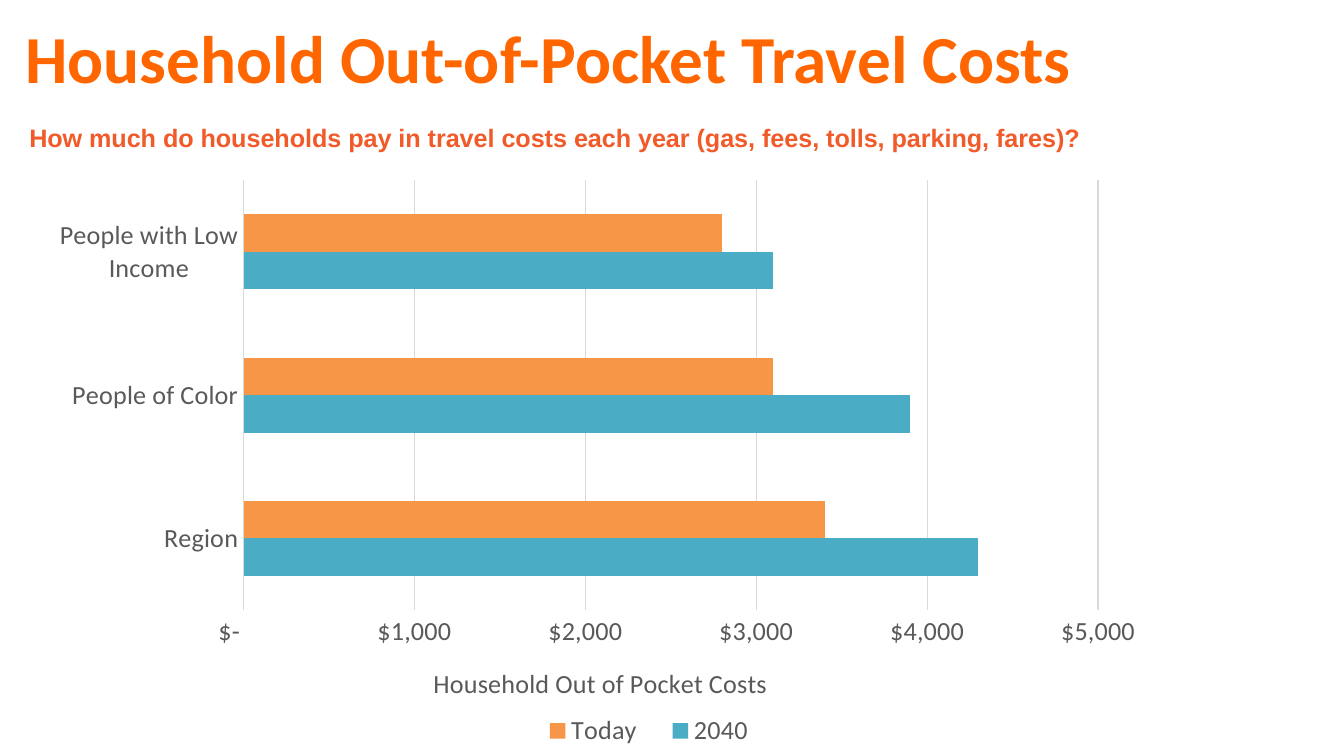
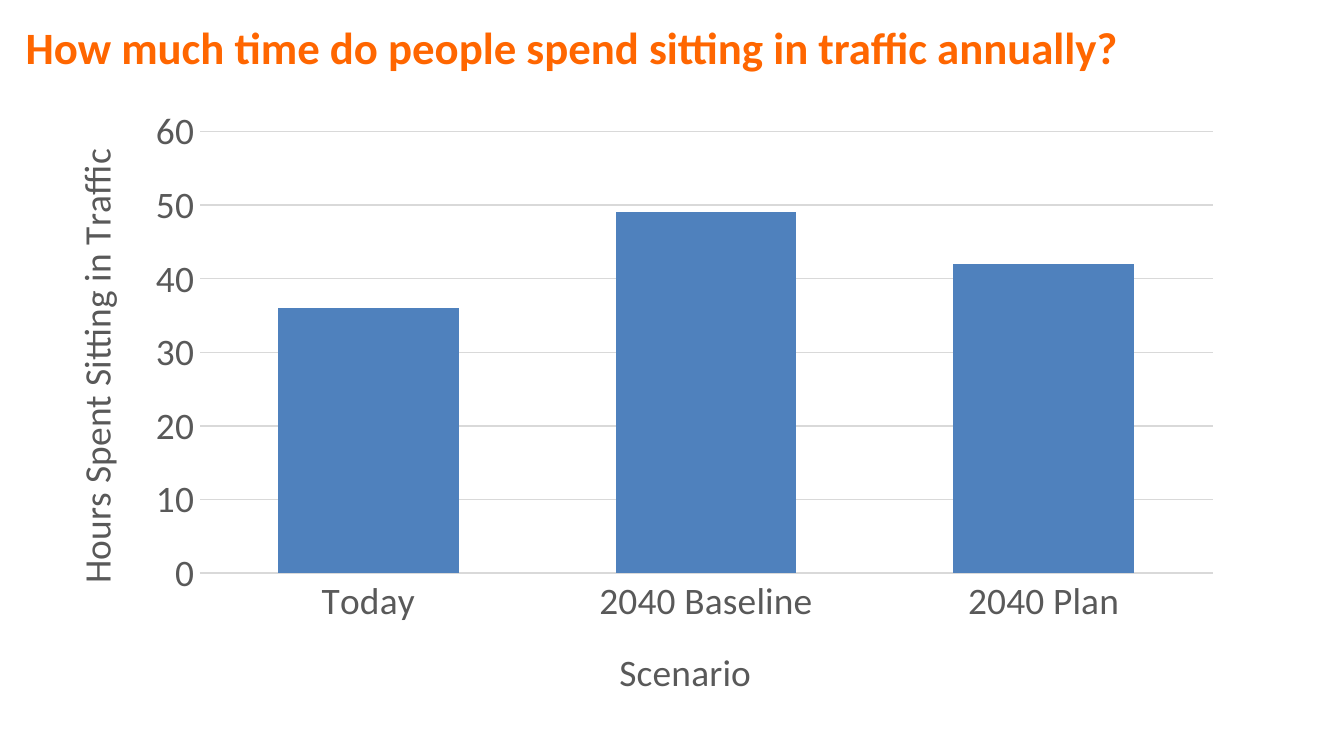
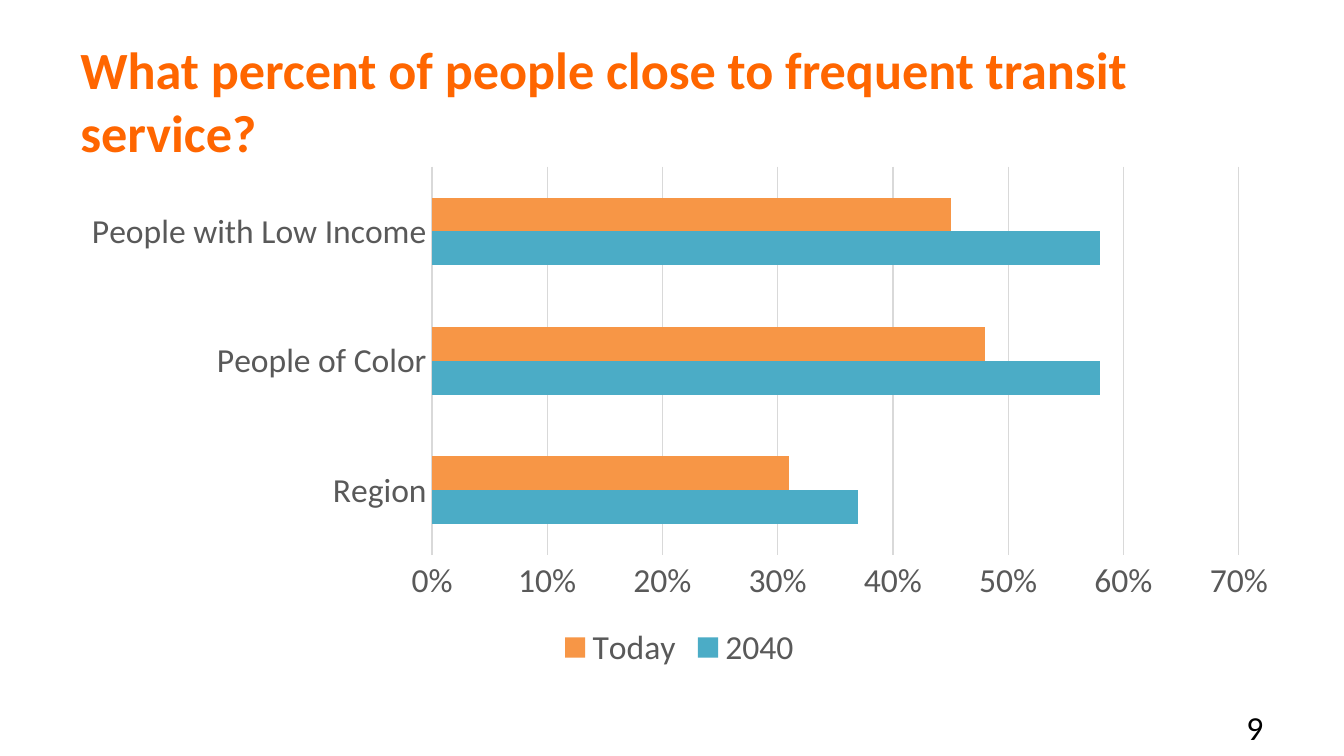
from lxml.etree import SubElement
from pptx import Presentation
from pptx.chart.data import CategoryChartData
from pptx.dml.color import RGBColor
from pptx.enum.chart import XL_CHART_TYPE as ChartType
from pptx.enum.chart import XL_LEGEND_POSITION as LegendPosition
from pptx.enum.chart import XL_TICK_MARK as TickMark
from pptx.enum.text import MSO_AUTO_SIZE as AutoSize
from pptx.enum.text import PP_ALIGN as Align
from pptx.oxml.ns import qn
from pptx.util import Inches, Pt

ORANGE, RUST, BLACK = "FF6600", "F15A29", "000000"
LABEL_GREY, GRID_GREY = "595959", "D9D9D9"
TODAY_ORANGE, FUTURE_TEAL, HOURS_BLUE = "F79646", "4BACC6", "4F81BD"
DOLLARS = r'_("$"* #,##0_);_("$"* \(#,##0\);_("$"* "-"??_);_(@_)'
GROUPS = ["Region", "People of Color", "People with Low Income"]


def rgb(hex_color):
    return RGBColor.from_string(hex_color)


def set_layout(parent, index, percents, inner=False):
    """Fix x, y and, if given, width and height in percent of the chart."""
    for old_layout in parent.findall(qn("c:layout")):
        parent.remove(old_layout)
    layout = parent.makeelement(qn("c:layout"))
    parent.insert(index, layout)
    manual = SubElement(layout, qn("c:manualLayout"))
    settings = {"layoutTarget": "inner"} if inner else {}
    settings.update(xMode="edge", yMode="edge")
    settings.update(zip("xywh", (percent / 100 for percent in percents)))
    for tag, value in settings.items():
        SubElement(manual, qn(f"c:{tag}")).set("val", str(value))


class Deck:
    def __init__(self):
        self.prs = Presentation()
        self.prs.slide_width = Inches(10)
        self.prs.slide_height = Inches(10) * 9 // 16
        self.slide = None

    def new_slide(self):
        self.slide = self.prs.slides.add_slide(self.prs.slide_layouts[6])

    def style(self, font, size, color, bold=False):
        font.name, font.size, font.bold = "Calibri", Pt(size), bold
        font.color.rgb = rgb(color)

    def text(self, words, box, size, color, bold=True, face="Calibri",
             align=Align.LEFT, grow=False):
        frame = self.slide.shapes.add_textbox(*map(Inches, box)).text_frame
        frame.word_wrap = True
        frame.auto_size = AutoSize.SHAPE_TO_FIT_TEXT if grow else AutoSize.NONE
        frame.text = words
        paragraph = frame.paragraphs[0]
        paragraph.alignment = align
        font = paragraph.runs[0].font
        self.style(font, size, color, bold)
        font.name = face
        return frame

    def heading(self, words, box, size):
        frame = self.text(words, box, size, ORANGE, grow=True)
        frame.margin_left = frame.margin_right = 0
        frame.margin_top = frame.margin_bottom = 0
        frame.paragraphs[0].line_spacing = 0.9

    def chart(self, kind, box, categories, series, size, number_format, top,
              step, gap, plot_area, overlap=0, legend=False):
        data = CategoryChartData(number_format=number_format)
        data.categories = categories
        for name, values, _ in series:
            data.add_series(name, values)
        chart = self.slide.shapes.add_chart(
            kind, *map(Inches, box), data).chart
        chart.has_title = False
        self.style(chart.font, size, BLACK)

        # Bars
        plot = chart.plots[0]
        plot.gap_width, plot.overlap = gap, overlap
        plot.vary_by_categories = False
        for bars, (_, _, color) in zip(plot.series, series):
            bars.format.fill.solid()
            bars.format.fill.fore_color.rgb = rgb(color)
        set_layout(chart.element.chart.plotArea, 0, plot_area, inner=True)

        # Axes and gridlines
        for axis in (chart.category_axis, chart.value_axis):
            axis.major_tick_mark = axis.minor_tick_mark = TickMark.NONE
            self.style(axis.tick_labels.font, size, LABEL_GREY)
        value_axis = chart.value_axis
        value_axis.minimum_scale, value_axis.maximum_scale = 0, top
        value_axis.major_unit = step
        value_axis.tick_labels.number_format = number_format
        value_axis.tick_labels.number_format_is_linked = False
        value_axis.format.line.fill.background()
        for line in (chart.category_axis.format.line,
                     value_axis.major_gridlines.format.line):
            line.color.rgb, line.width = rgb(GRID_GREY), Pt(0.75)

        # Legend
        chart.has_legend = legend
        if legend:
            chart.legend.position = LegendPosition.BOTTOM
            chart.legend.include_in_layout = False
            self.style(chart.legend.font, size, LABEL_GREY)
        return chart

    def axis_title(self, axis, words, size, place):
        title = axis.axis_title
        title.text_frame.text = words
        self.style(title.text_frame.paragraphs[0].runs[0].font, size,
                   LABEL_GREY)
        set_layout(title.element, 1, place)

    def group_chart(self, box, future, today, **options):
        """Bars for each group of people, today against 2040."""
        series = [("2040", future, FUTURE_TEAL),
                  ("Today", today, TODAY_ORANGE)]
        return self.chart(ChartType.BAR_CLUSTERED, box, GROUPS, series,
                          gap=182, legend=True, **options)


def main():
    deck = Deck()

    # Travel costs
    deck.new_slide()
    deck.heading("Household Out-of-Pocket Travel Costs",
                 (0.19, 0.19, 9.59, 0.56), 36)
    deck.text("How much do households pay in travel costs each year "
              "(gas, fees, tolls, parking, fares)?",
              (0.12, 0.86, 9.44, 0.33), 13.5, RUST, face="Arial", grow=True)
    costs = deck.group_chart(
        (0, 1.21, 9.11, 4.41), (4300, 3900, 3100), (3400, 3100, 2800),
        size=14, number_format=DOLLARS, top=5000, step=1000,
        plot_area=(19.9, 3, 69.8, 72.5))
    deck.axis_title(costs.value_axis, "Household Out of Pocket Costs", 14,
                    (35, 84))
    set_layout(costs.legend.element if hasattr(costs.legend, "element")
               else costs.element.chart.find(qn("c:legend")),
               1, (42.7, 92.4, 20.6, 7))

    # Time in traffic
    deck.new_slide()
    deck.heading("How much time do people spend sitting in traffic annually?",
                 (0.19, 0.19, 8.88, 0.37), 24)
    hours = deck.chart(
        ChartType.COLUMN_CLUSTERED, (0.3, 0.71, 8.91, 4.71),
        ["Today", "2040 Baseline", "2040 Plan"],
        [("Series 1", (36, 49, 42), HOURS_BLUE)],
        size=20, number_format="0", top=60, step=10, gap=87, overlap=-27,
        plot_area=(13.3, 5.7, 84.6, 69.8))
    deck.axis_title(hours.category_axis, "Scenario", 20, (47.8, 85.8))
    deck.axis_title(hours.value_axis, "Hours Spent Sitting in Traffic", 20,
                    (1.9, 7.4))

    # Frequent transit
    deck.new_slide()
    deck.text("What percent of people close to frequent transit service?",
              (0.5, 0.23, 8.23, 0.94), 28, ORANGE)
    deck.text("9", (7.17, 5.21, 2.33, 0.3), 18, BLACK, bold=False,
              align=Align.RIGHT)
    deck.group_chart(
        (0.5, 1.16, 9.11, 3.86), (0.37, 0.58, 0.58), (0.31, 0.48, 0.45),
        size=18, number_format="0%", top=0.7, step=0.1,
        plot_area=(29.8, 2.1, 65.9, 74.9))

    deck.prs.save("out.pptx")


if __name__ == "__main__":
    main()
